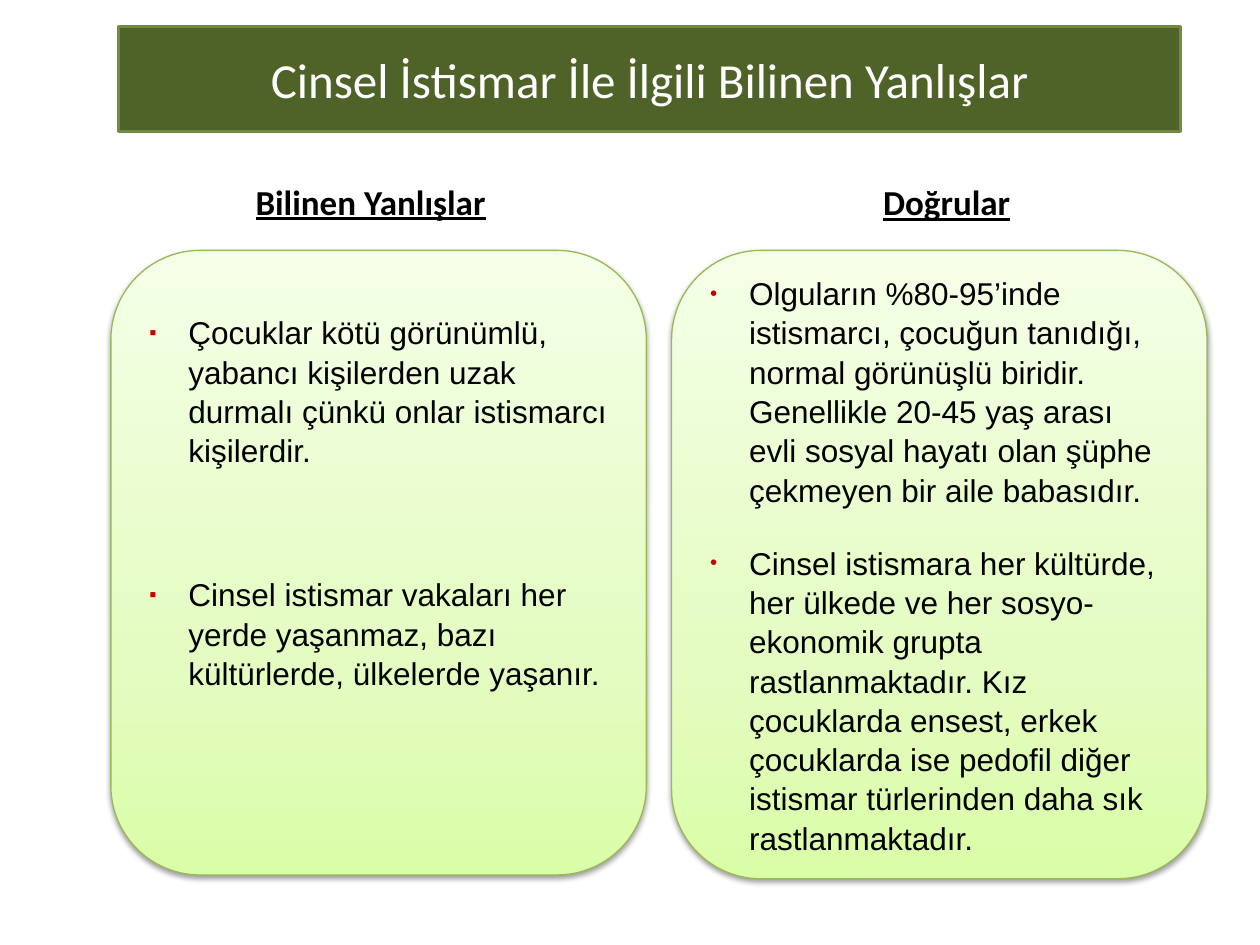
import copy
import pptx
import pptx.util
import pptx.dml.color
import pptx.enum.dml
import pptx.enum.shapes
import pptx.enum.text
import pptx.oxml
import pptx.oxml.ns
from lxml import etree

Pt, Inches = pptx.util.Pt, pptx.util.Inches
RGB = pptx.dml.color.RGBColor.from_string
qn, nsdecls = pptx.oxml.ns.qn, pptx.oxml.ns.nsdecls
ANCHOR = pptx.enum.text.MSO_ANCHOR
ALIGN = pptx.enum.text.PP_ALIGN

theme = {
    "banner": "4F6228", "banner_edge": "738A42", "panel_edge": "98B955",
    "panel_stops": [(0, "DAFDA7"), (0.35, "E4FCC2"), (1, "F5FFE7")],
    "bullet": "CC0000",
    "title": {"size": Pt(28), "name": "Calibri", "bold": False, "color": "FFFFFF"},
    "heading": {"size": Pt(20), "name": "Calibri", "bold": True,
                "underline": True, "color": "000000"},
    "body": {"size": Pt(18), "name": "Arial", "color": "000000"},
}

deck = pptx.Presentation()
deck.slide_width, deck.slide_height = Inches(10), Inches(7.5)
W, H = deck.slide_width, deck.slide_height
slide = deck.slides.add_slide(deck.slide_layouts[5])


def set_font(font, style):
    for key, value in style.items():
        if key == "color":
            font.color.rgb = RGB(value)
        else:
            setattr(font, key, value)


def add_bullet(paragraph, mark):
    props = paragraph._p.get_or_add_pPr()
    props.set("marL", str(Inches(0.31)))
    props.set("indent", str(-Inches(0.31)))
    for xml in (f'<a:buClr {nsdecls("a")}><a:srgbClr val="{theme["bullet"]}"/></a:buClr>',
                f'<a:buSzPct {nsdecls("a")} val="65000"/>',
                f'<a:buFont {nsdecls("a")} typeface="Arial"/>',
                f'<a:buChar {nsdecls("a")} char="{mark}"/>'):
        props.append(pptx.oxml.parse_xml(xml))


# Title banner: the title placeholder, with rounded corners
banner = slide.shapes.title
for side, value in {"left": W * 0.094, "top": H * 0.028,
                    "width": W * 0.843, "height": H * 0.111}.items():
    setattr(banner, side, int(value))
outline = etree.SubElement(banner._element.spPr, qn("a:prstGeom"), prst="roundRect")
etree.SubElement(outline, qn("a:avLst"))
banner.fill.solid()
banner.fill.fore_color.rgb = RGB(theme["banner"])
banner.line.color.rgb = RGB(theme["banner_edge"])
banner.line.width = Pt(2)
banner.text_frame.text = "Cinsel İstismar İle İlgili Bilinen Yanlışlar"
banner.text_frame.auto_size = pptx.enum.text.MSO_AUTO_SIZE.NONE
banner.text_frame.vertical_anchor = ANCHOR.MIDDLE
banner.text_frame.paragraphs[0].alignment = ALIGN.CENTER
set_font(banner.text_frame.paragraphs[0].runs[0].font, theme["title"])

# Two columns: myths and facts
column_left, column_width, column_step = W * 0.088, W * 0.425, W * 0.445
panel_top = H * 0.265
columns = [
    {"heading": "Bilinen Yanlışlar", "heading_left": 0.193, "heading_top": 0.184,
     "heading_width": 0.204, "height": 0.661, "mark": "▪", "gap": Pt(60),
     "frame": {"vertical_anchor": ANCHOR.TOP, "margin_top": Inches(0.28)},
     "points": [
         "Çocuklar kötü görünümlü, yabancı kişilerden uzak durmalı çünkü onlar "
         "istismarcı kişilerdir.",
         "Cinsel istismar vakaları her yerde yaşanmaz, bazı kültürlerde, "
         "ülkelerde yaşanır."]},
    {"heading": "Doğrular", "heading_left": 0.691, "heading_top": 0.185,
     "heading_width": 0.122, "height": 0.665, "mark": "•", "gap": Pt(19.4),
     "frame": {"vertical_anchor": ANCHOR.MIDDLE},
     "points": [
         "Olguların %80-95’inde istismarcı, çocuğun tanıdığı, normal görünüşlü "
         "biridir. Genellikle 20-45 yaş arası evli sosyal hayatı olan şüphe "
         "çekmeyen bir aile babasıdır.",
         "Cinsel istismara her kültürde, her ülkede ve her sosyo-ekonomik grupta "
         "rastlanmaktadır. Kız çocuklarda ensest, erkek çocuklarda ise pedofil "
         "diğer istismar türlerinden daha sık rastlanmaktadır."]},
]

for index, column in enumerate(columns):
    # Panel with gradient and soft shadow
    panel = slide.shapes.add_shape(
        pptx.enum.shapes.MSO_SHAPE.ROUNDED_RECTANGLE,
        int(column_left + index * column_step), int(panel_top),
        int(column_width), int(H * column["height"]))
    panel.fill.gradient()
    panel.fill.gradient_angle = 90
    stop_list = panel._element.spPr.find(".//" + qn("a:gsLst"))
    stop_list.append(copy.deepcopy(stop_list[0]))
    for stop, (position, color) in zip(panel.fill.gradient_stops, theme["panel_stops"]):
        stop.position = position
        stop.color.rgb = RGB(color)
    panel.line.color.rgb = RGB(theme["panel_edge"])
    panel.line.width = Pt(0.75)
    panel.shadow.inherit = False
    panel._element.spPr.find(qn("a:effectLst")).append(pptx.oxml.parse_xml(
        f'<a:outerShdw {nsdecls("a")} blurRad="{Pt(3.1)}" dist="{Pt(1.6)}" '
        'dir="5400000" rotWithShape="0"><a:srgbClr val="000000">'
        '<a:alpha val="38000"/></a:srgbClr></a:outerShdw>'))

    # Bulleted points
    frame = panel.text_frame
    frame.word_wrap = True
    for key, value in column["frame"].items():
        setattr(frame, key, value)
    for number, point in enumerate(column["points"]):
        paragraph = frame.add_paragraph() if number else frame.paragraphs[0]
        paragraph.text = point
        paragraph.alignment = ALIGN.LEFT
        paragraph.line_spacing = 1.04
        paragraph.space_before = column["gap"] if number else Pt(0)
        add_bullet(paragraph, column["mark"])
        set_font(paragraph.runs[0].font, theme["body"])

    # Column heading
    heading = slide.shapes.add_textbox(
        int(W * column["heading_left"]), int(H * column["heading_top"]),
        int(W * column["heading_width"]), int(H * 0.059)).text_frame
    heading.word_wrap = False
    heading.auto_size = pptx.enum.text.MSO_AUTO_SIZE.SHAPE_TO_FIT_TEXT
    heading.text = column["heading"]
    set_font(heading.paragraphs[0].runs[0].font, theme["heading"])

deck.save("out.pptx")
